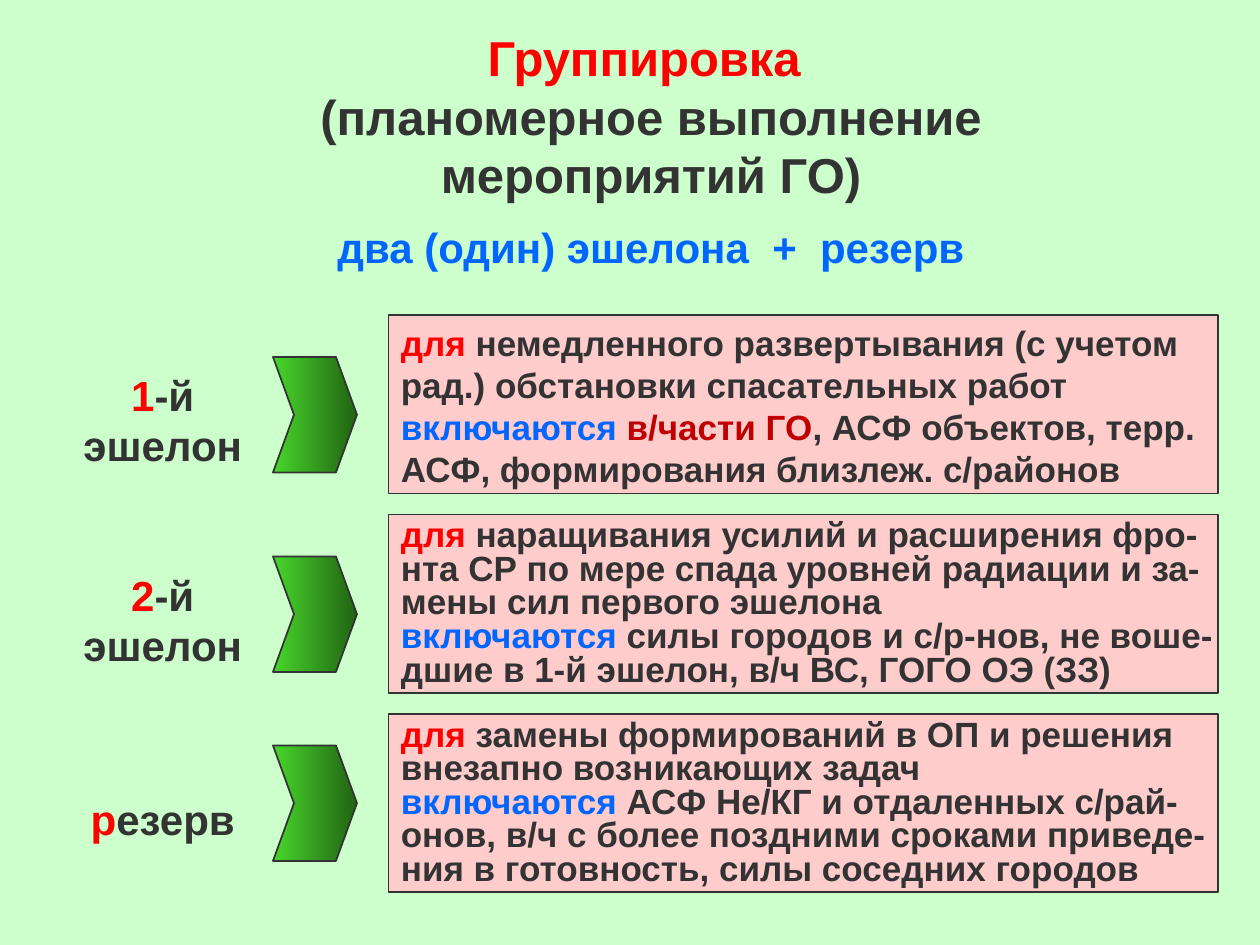
import pptx
import pptx.util
import pptx.dml.color
import pptx.enum.shapes
import pptx.enum.text
from dataclasses import dataclass

PX = 7620
SHAPE = pptx.enum.shapes.MSO_SHAPE
ALIGN = pptx.enum.text.PP_ALIGN
ANCHOR = pptx.enum.text.MSO_ANCHOR


@dataclass(frozen=True)
class Theme:
    font: str = "Arial"
    background: str = "CCFFCC"
    panel: str = "FFCCCC"
    dark: str = "333333"
    red: str = "FF0000"
    blue: str = "0066FF"
    crimson: str = "C00000"
    arrow_start: str = "47D62A"
    arrow_end: str = "216313"
    title: int = 28
    label: int = 24
    body: int = 20
    line: int = 1


T = Theme()

ROW_TOP = 300
ROW_PITCH = 190

ECHELONS = [
    {
        "label": [[("1", T.red), ("-й", T.dark)], [("эшелон", T.dark)]],
        "label_top": 340,
        "arrow_top": 340,
        "spacing": None,
        "body": [
            [("для ", T.red), ("немедленного развертывания (с учетом", T.dark)],
            [("рад.) обстановки спасательных работ", T.dark)],
            [("включаются ", T.blue), ("в/части ГО", T.crimson),
             (", АСФ объектов, терр.", T.dark)],
            [("АСФ, формирования близлеж. с/районов", T.dark)],
        ],
    },
    {
        "label": [[("2", T.red), ("-й", T.dark)], [("эшелон", T.dark)]],
        "label_top": 530,
        "arrow_top": 530,
        "spacing": 0.8,
        "body": [
            [("для", T.red), (" наращивания усилий и расширения фро-", T.dark)],
            [("нта СР по мере спада уровней радиации и за-", T.dark)],
            [("мены сил первого эшелона", T.dark)],
            [("включаются", T.blue), (" силы городов и с/р-нов, не воше-", T.dark)],
            [("дшие в 1-й эшелон, в/ч ВС, ГОГО ОЭ (ЗЗ)", T.dark)],
        ],
    },
    {
        "label": [[("р", T.red), ("езерв", T.dark)]],
        "label_top": 720,
        "arrow_top": 710,
        "spacing": 0.8,
        "body": [
            [("для", T.red), (" замены формирований в ОП и решения", T.dark)],
            [("внезапно возникающих задач", T.dark)],
            [("включаются", T.blue), (" АСФ Не/КГ и отдаленных с/рай-", T.dark)],
            [("онов, в/ч с более поздними сроками приведе-", T.dark)],
            [("ния в готовность, силы соседних городов", T.dark)],
        ],
    },
]


def px(*values):
    return [pptx.util.Emu(v * PX) for v in values]


def rgb(value):
    return pptx.dml.color.RGBColor.from_string(value)


def write(tf, lines, size, align, anchor, spacing=None):
    tf.word_wrap = False
    tf.vertical_anchor = anchor
    for i, line in enumerate(lines):
        p = tf.add_paragraph() if i else tf.paragraphs[0]
        p.alignment = align
        if spacing:
            p.line_spacing = spacing
        for text, color in line:
            r = p.add_run()
            r.text = text
            r.font.name = T.font
            r.font.size = pptx.util.Pt(size)
            r.font.bold = True
            r.font.color.rgb = rgb(color)


def add_text(s, box, lines, size):
    sp = s.shapes.add_textbox(*px(*box))
    write(sp.text_frame, lines, size, ALIGN.CENTER, ANCHOR.MIDDLE)


def add_outlined(s, kind, box):
    sp = s.shapes.add_shape(kind, *px(*box))
    sp.shadow.inherit = False
    sp.line.color.rgb = rgb(T.dark)
    sp.line.width = pptx.util.Pt(T.line)
    return sp


def add_panel(s, box, lines, spacing):
    sp = add_outlined(s, SHAPE.RECTANGLE, box)
    sp.fill.solid()
    sp.fill.fore_color.rgb = rgb(T.panel)
    write(sp.text_frame, lines, T.body, ALIGN.JUSTIFY, ANCHOR.TOP, spacing)


def add_arrow(s, box):
    sp = add_outlined(s, SHAPE.CHEVRON, box)
    sp.adjustments[0] = 0.25
    sp.fill.gradient()
    sp.fill.gradient_angle = 0
    for stop, position, color in zip(
            sp.fill.gradient_stops, (0, 1), (T.arrow_start, T.arrow_end)):
        stop.position = position
        stop.color.rgb = rgb(color)


def main():
    prs = pptx.Presentation()
    prs.slide_width, prs.slide_height = px(1200, 900)
    s = prs.slides.add_slide(prs.slide_layouts[6])
    s.background.fill.solid()
    s.background.fill.fore_color.rgb = rgb(T.background)

    add_text(s, (160, 50, 920, 120), [
        [("Группировка ", T.red)],
        [("(планомерное выполнение мероприятий ГО)", T.dark)],
    ], T.title)
    add_text(s, (200, 200, 840, 70),
             [[("два (один) эшелона  +  резерв", T.blue)]], T.label)

    for i, echelon in enumerate(ECHELONS):
        add_text(s, (60, echelon["label_top"], 190, 120), echelon["label"], T.label)
        add_panel(s, (370, ROW_TOP + i * ROW_PITCH, 790, 170),
                  echelon["body"], echelon["spacing"])
        add_arrow(s, (260, echelon["arrow_top"], 80, 110))

    prs.save("out.pptx")


if __name__ == "__main__":
    main()
